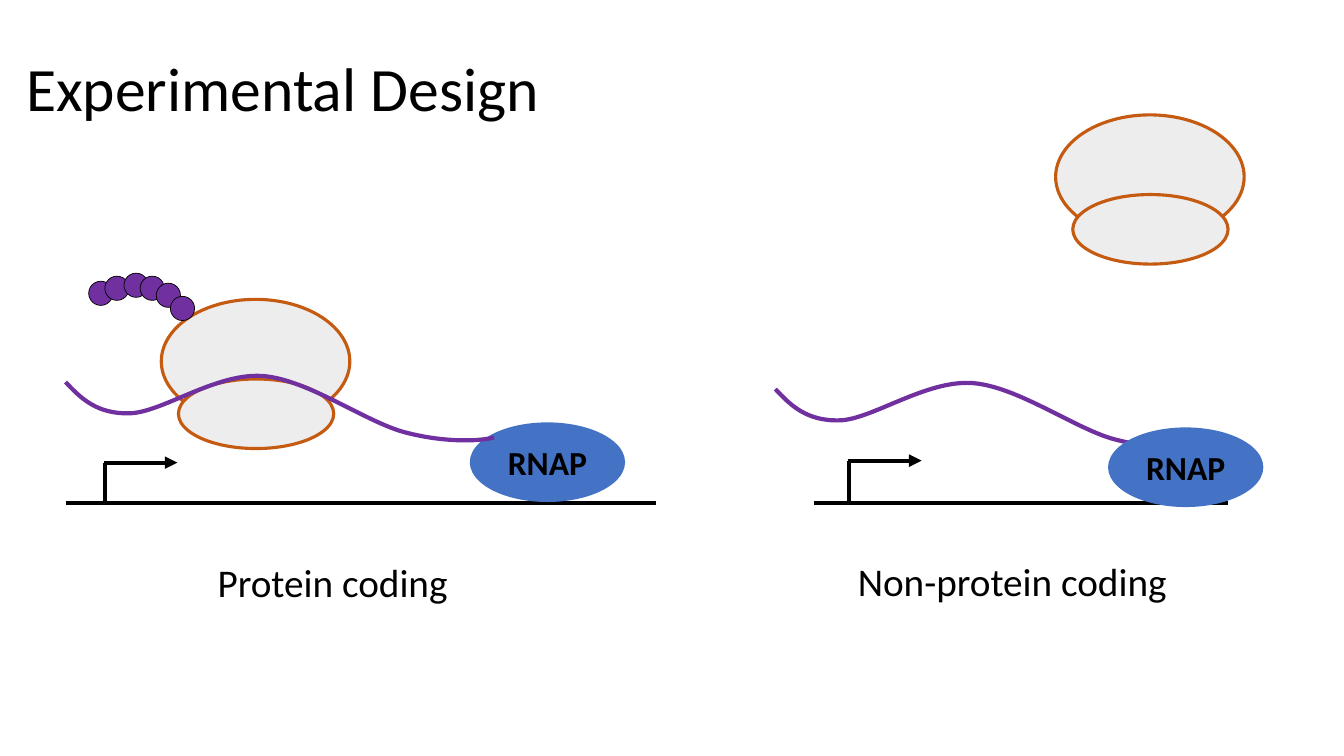
from dataclasses import dataclass

from lxml import etree
from pptx import Presentation
from pptx import util as u
from pptx.dml.color import RGBColor
from pptx.enum import shapes, text
from pptx.oxml.ns import qn


@dataclass(frozen=True)
class Theme:
    font: str = "Calibri"
    ink: str = "000000"
    subunit_fill: str = "EDEDED"
    subunit_edge: str = "C55A11"
    purple: str = "7030A0"
    polymerase: str = "4472C4"
    title_size: int = 44
    caption_size: int = 28
    label_size: int = 24


class Page:
    """Holds the theme and the current slide, and draws each kind of element."""

    def __init__(self, deck, theme):
        self.theme = theme
        self.slide = deck.slides.add_slide(deck.slide_layouts[5])

    def add_span(self, para, words, size, bold=False):
        span = para.add_run()
        span.text = words
        span.font.name = self.theme.font
        span.font.size = u.Pt(size)
        span.font.bold = bold
        span.font.color.rgb = RGBColor.from_string(self.theme.ink)

    def title(self, words, left, top, width, height):
        box = self.slide.shapes.title
        box.left, box.top = u.Inches(left), u.Inches(top)
        box.width, box.height = u.Inches(width), u.Inches(height)
        frame = box.text_frame
        frame.auto_size = text.MSO_AUTO_SIZE.NONE
        frame.vertical_anchor = text.MSO_ANCHOR.MIDDLE
        para = frame.paragraphs[0]
        para.alignment = text.PP_ALIGN.LEFT
        para.line_spacing = 0.9
        self.add_span(para, words, self.theme.title_size)

    def caption(self, words, left, top, width):
        box = self.slide.shapes.add_textbox(
            u.Inches(left), u.Inches(top), u.Inches(width), u.Inches(0.57))
        box.text_frame.word_wrap = True
        box.text_frame.auto_size = text.MSO_AUTO_SIZE.SHAPE_TO_FIT_TEXT
        self.add_span(box.text_frame.paragraphs[0], words, self.theme.caption_size)

    def outline(self, shape, colour, weight):
        shape.line.color.rgb = RGBColor.from_string(colour)
        shape.line.width = u.Pt(weight)

    def oval(self, left, top, width, height, fill, edge=None, weight=0):
        shape = self.slide.shapes.add_shape(
            shapes.MSO_SHAPE.OVAL, u.Inches(left), u.Inches(top),
            u.Inches(width), u.Inches(height))
        shape.shadow.inherit = False
        shape.fill.solid()
        shape.fill.fore_color.rgb = RGBColor.from_string(fill)
        if edge:
            self.outline(shape, edge, weight)
        else:
            shape.line.fill.background()
        return shape

    def line(self, start, end, weight, arrow=False):
        points = [u.Inches(length) for length in (*start, *end)]
        connector = self.slide.shapes.add_connector(
            shapes.MSO_CONNECTOR.STRAIGHT, *points)
        self.outline(connector, self.theme.ink, weight)
        properties = connector._element.spPr
        if arrow:
            etree.SubElement(properties.find(qn("a:ln")), qn("a:tailEnd"), type="triangle")
        etree.SubElement(properties, qn("a:effectLst"))

    def curve(self, points, left, top, weight):
        """Draw cubic curves: a start point, then two handles and an end each."""
        places = [(u.Inches(left + x), u.Inches(top + y)) for x, y in points]
        builder = self.slide.shapes.build_freeform(*places[0])
        builder.add_line_segments(places[1:], close=False)
        shape = builder.convert_to_shape()
        shape.shadow.inherit = False
        shape.fill.background()
        self.outline(shape, self.theme.purple, weight)
        # Turn every three straight segments into one cubic curve
        outline = next(shape._element.iter(qn("a:path")))
        segments = outline.findall(qn("a:lnTo"))
        for first in range(0, len(segments), 3):
            cubic = etree.SubElement(outline, qn("a:cubicBezTo"))
            for segment in segments[first:first + 3]:
                cubic.append(segment[0])
                outline.remove(segment)

    def ribosome(self, left, top):
        style = self.theme
        for x, y, width, height in ((0, 0, 1.87, 1.23), (0.17, 0.79, 1.54, 0.69)):
            self.oval(left + x, top + y, width, height,
                      style.subunit_fill, style.subunit_edge, 2.25)

    def peptide(self, beads):
        for left, top in beads:
            self.oval(left, top, 0.24, 0.24, self.theme.purple, self.theme.ink, 0.5)

    def rnap(self, left, top):
        shape = self.oval(left, top, 1.54, 0.79, self.theme.polymerase)
        shape.text_frame.vertical_anchor = text.MSO_ANCHOR.MIDDLE
        para = shape.text_frame.paragraphs[0]
        para.alignment = text.PP_ALIGN.CENTER
        self.add_span(para, "RNAP", self.theme.label_size, bold=True)

    def promoter(self, left, top):
        self.line((left, top), (left, top + 0.4), 3)
        self.line((left - 0.01, top), (left + 0.72, top), 3, arrow=True)

    def transcript(self, left, top):
        self.curve(TRANSCRIPT, left, top, 3)


# Transcript outline, measured from its left end
TRANSCRIPT = [
    (0, 0),
    (0.15, 0.16), (0.31, 0.32), (0.64, 0.31),
    (0.96, 0.3), (1.49, -0.09), (1.95, -0.06),
    (2.4, -0.03), (2.98, 0.4), (3.37, 0.5),
    (3.75, 0.6), (4.1, 0.59), (4.25, 0.55),
]
BEADS = [(0.88, 2.79), (1.04, 2.74), (1.23, 2.71),
         (1.39, 2.74), (1.55, 2.81), (1.69, 2.94)]
DNA_TOP = 4.99


def main():
    deck = Presentation()
    deck.slide_width, deck.slide_height = u.Inches(13.33), u.Inches(7.5)
    page = Page(deck, Theme())
    page.title("Experimental Design", 0.16, 0, 11.78, 1.81)

    # Protein coding: the ribosome reads the transcript
    page.ribosome(1.6, 2.97)
    page.peptide(BEADS)
    page.line((0.65, DNA_TOP), (6.51, DNA_TOP), 2.25)
    page.rnap(4.66, 4.19)
    page.promoter(1.04, 4.59)
    page.transcript(0.65, 3.79)
    page.caption("Protein coding", 2.06, 5.49, 3.85)

    # Non-protein coding: the ribosome stays apart
    page.transcript(7.69, 3.86)
    page.ribosome(10.47, 1.14)
    page.line((8.07, DNA_TOP), (12.18, DNA_TOP), 2.25)
    page.rnap(10.99, 4.24)
    page.promoter(8.42, 4.57)
    page.caption("Non-protein coding", 8.41, 5.48, 4.55)

    deck.save("out.pptx")


if __name__ == "__main__":
    main()
